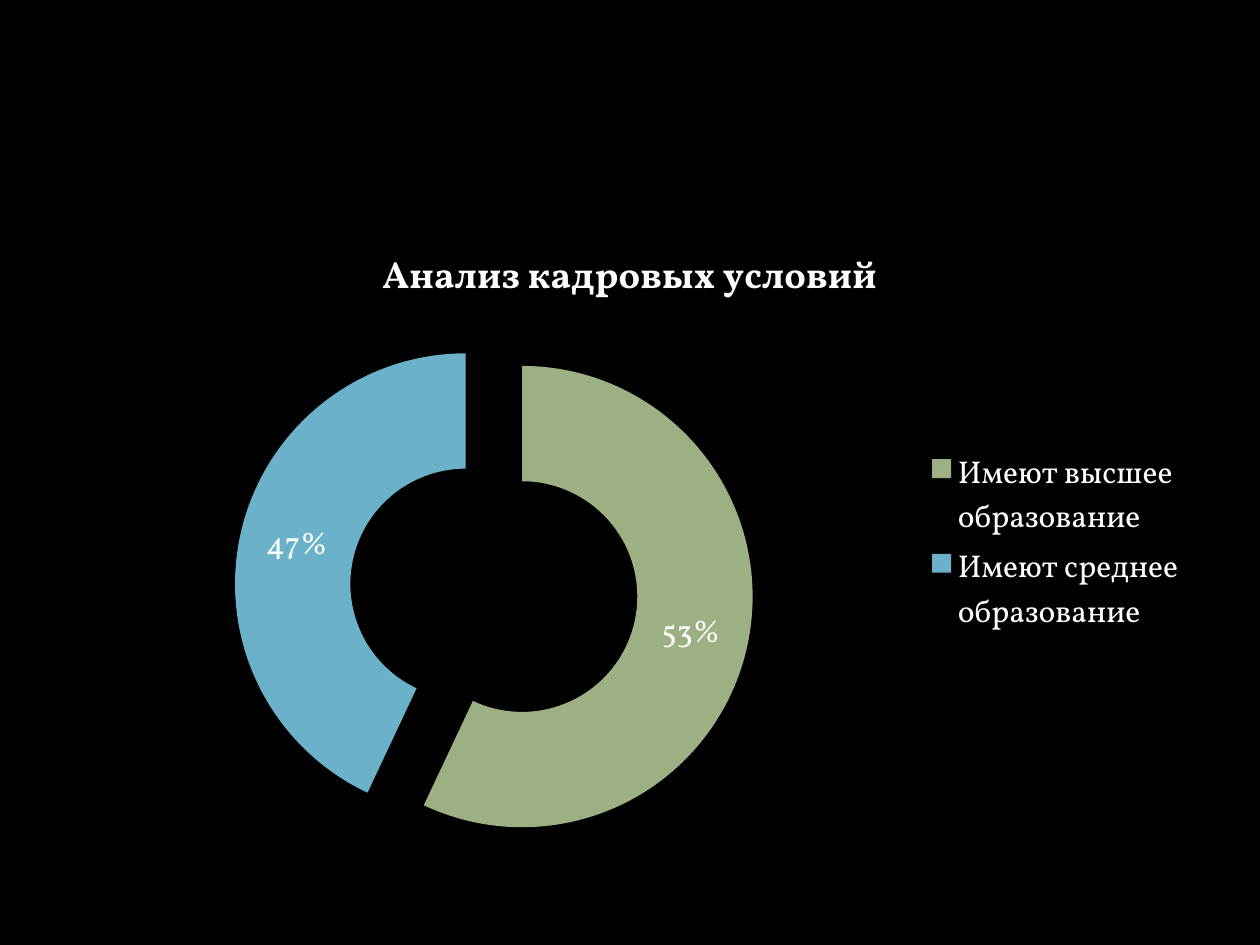
from lxml import etree
from pptx import Presentation
from pptx.chart.data import CategoryChartData
from pptx.dml.color import RGBColor
from pptx.enum.chart import XL_CHART_TYPE as ChartType, XL_LEGEND_POSITION as LegendPosition
from pptx.oxml import parse_xml
from pptx.oxml.ns import nsdecls, qn
from pptx.util import Inches, Pt

TITLE = "Анализ кадровых условий"
# category, value, label, colour
SLICES = [
    ("", None, None, "CEB966"),
    ("Имеют высшее образование", 57, "53%", "9CB084"),
    ("Имеют среднее образование", 43, "47%", "6BB1C9"),
]


def style_font(font, size=18, bold=False, color="FFFFFF"):
    font.name = "Vollkorn"
    font.size = Pt(size)
    font.bold = bold
    font.color.rgb = RGBColor.from_string(color)


def manual_layout(inner=False, **fractions):
    """Return a c:layout element placed by fractions of the chart area."""
    layout = parse_xml(f"<c:layout {nsdecls('c')}><c:manualLayout/></c:layout>")
    manual = layout[0]
    if inner:
        etree.SubElement(manual, qn("c:layoutTarget")).set("val", "inner")
    for axis in ("x", "y"):
        etree.SubElement(manual, qn(f"c:{axis}Mode")).set("val", "edge")
    for name, value in fractions.items():
        etree.SubElement(manual, qn(f"c:{name}")).set("val", str(value))
    return layout


deck = Presentation()
deck.slide_width, deck.slide_height = Inches(10), Inches(7.5)
page = deck.slides.add_slide(deck.slide_layouts[6])
page.background.fill.solid()
page.background.fill.fore_color.rgb = RGBColor.from_string("000000")

data = CategoryChartData()
data.categories = [category for category, *_ in SLICES]
data.add_series(TITLE, [value for _, value, *_ in SLICES])
chart = page.shapes.add_chart(
    ChartType.DOUGHNUT, Inches(0.5), Inches(1.75), Inches(9), Inches(5.15), data
).chart
style_font(chart.font)

# Title
chart.has_title = True
para = chart.chart_title.text_frame.paragraphs[0]
span = para.add_run()
span.text = TITLE
style_font(span.font, size=21.6, bold=True)

# Ring
plot = chart.plots[0]
plot.vary_by_categories = True
series = plot.series[0]
for index, (_, _, label, color) in enumerate(SLICES):
    point = series.points[index]
    point.format.fill.solid()
    point.format.fill.fore_color.rgb = RGBColor.from_string(color)
    if label:
        para = point.data_label.text_frame.paragraphs[0]
        span = para.add_run()
        span.text = label
        style_font(span.font)
explosion = parse_xml(f'<c:explosion {nsdecls("c")} val="25"/>')
series._element.find(qn("c:dPt")).addprevious(explosion)

plot_area = chart._chartSpace.chart.plotArea
for old_layout in plot_area.findall(qn("c:layout")):
    plot_area.remove(old_layout)
plot_area.insert(0, manual_layout(inner=True, x=0.15, y=0.17, w=0.46, h=0.8))

# Legend, without the empty first category
chart.has_legend = True
legend = chart.legend
legend.position = LegendPosition.RIGHT
legend.include_in_layout = True
style_font(legend.font)
hidden_entry = parse_xml(
    f'<c:legendEntry {nsdecls("c")}><c:idx val="0"/><c:delete val="1"/></c:legendEntry>'
)
legend_position = legend._element.find(qn("c:legendPos"))
legend_position.addnext(hidden_entry)
for old_layout in legend._element.findall(qn("c:layout")):
    legend._element.remove(old_layout)
hidden_entry.addnext(manual_layout(x=0.76, y=0.35, w=0.23, h=0.3))

deck.save("out.pptx")
